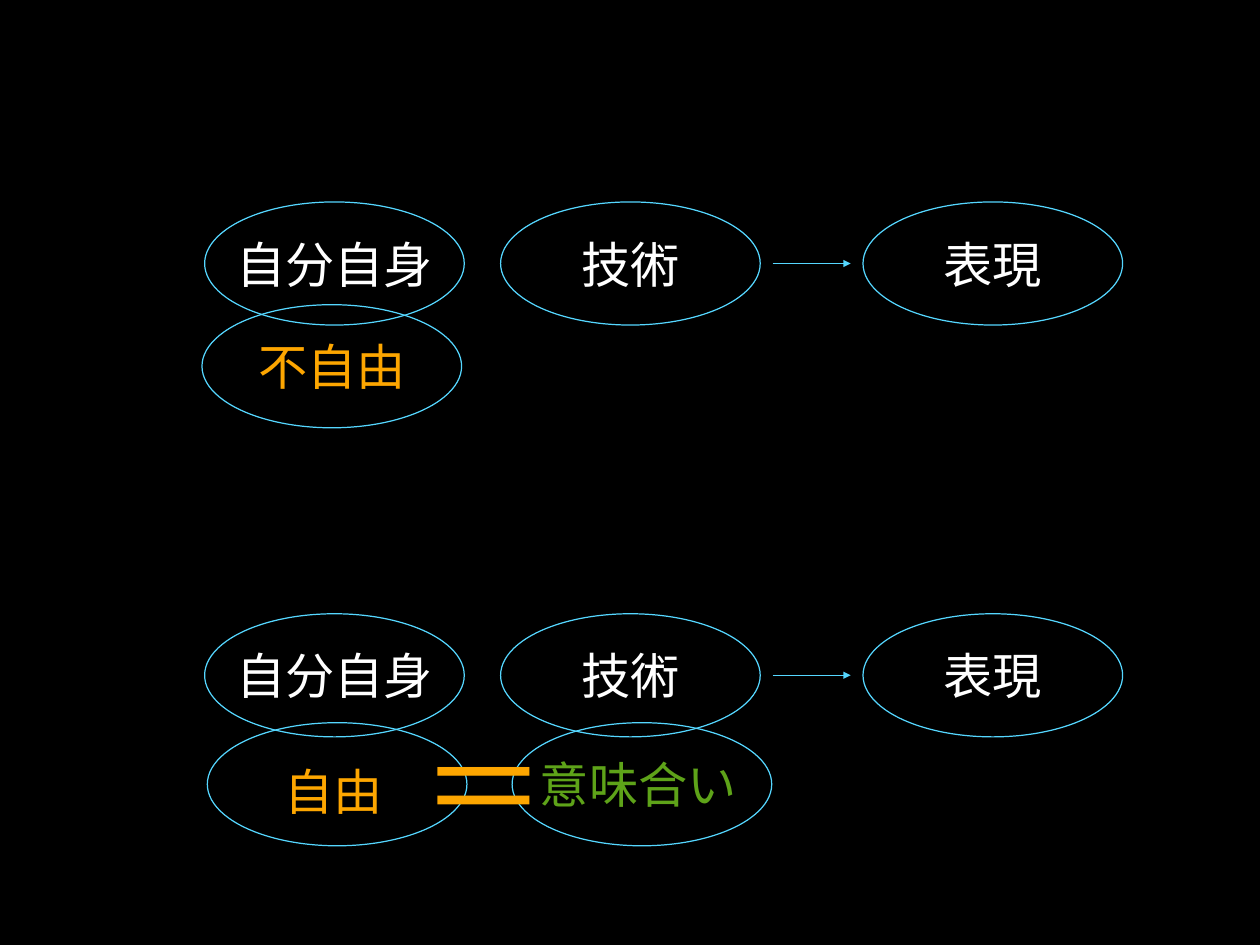
from dataclasses import dataclass

from lxml import etree
from pptx import Presentation
from pptx.dml.color import RGBColor
from pptx.enum.shapes import MSO_CONNECTOR, MSO_SHAPE
from pptx.enum.text import MSO_ANCHOR, PP_ALIGN
from pptx.oxml.ns import qn
from pptx.util import Inches, Pt


@dataclass(frozen=True)
class Theme:
    """Colours, type sizes and shared measures of the slide."""
    background: RGBColor = RGBColor(0x00, 0x00, 0x00)
    outline: RGBColor = RGBColor(0x55, 0xD7, 0xFF)
    white: RGBColor = RGBColor(0xFF, 0xFF, 0xFF)
    orange: RGBColor = RGBColor(0xFD, 0xA6, 0x00)
    green: RGBColor = RGBColor(0x5E, 0xA3, 0x19)
    font: str = "Roboto"
    label_size: int = 40
    sign_size: int = 103
    line_width: int = 1
    oval_width: float = 2.93
    oval_height: float = 1.39
    inset: float = 0.06


THEME = Theme()


def write_label(shape, text, color, size, wrap=False, shift_left=0, shift_down=0):
    """Write one centred line in a shape, shifted by uneven insets."""
    frame = shape.text_frame
    frame.word_wrap = wrap
    frame.vertical_anchor = MSO_ANCHOR.MIDDLE
    frame.margin_left = frame.margin_bottom = Inches(THEME.inset)
    frame.margin_right = Inches(THEME.inset + 2 * shift_left)
    frame.margin_top = Inches(THEME.inset + 2 * shift_down)
    paragraph = frame.paragraphs[0]
    paragraph.text = text
    paragraph.alignment = PP_ALIGN.CENTER
    paragraph.font.name = THEME.font
    paragraph.font.size = Pt(size)
    paragraph.font.color.rgb = color
    properties = paragraph._p.pPr.find(qn("a:defRPr"))
    etree.SubElement(properties, qn("a:ea")).set("typeface", THEME.font)


def add_oval(slide, left, top, text, color, shift_left=0, shift_down=0):
    """Draw an outlined oval with its label."""
    oval = slide.shapes.add_shape(
        MSO_SHAPE.OVAL, Inches(left), Inches(top),
        Inches(THEME.oval_width), Inches(THEME.oval_height))
    oval.shadow.inherit = False
    oval.fill.background()
    oval.line.color.rgb = THEME.outline
    oval.line.width = Pt(THEME.line_width)
    write_label(oval, text, color, THEME.label_size,
                shift_left=shift_left, shift_down=shift_down)


def add_arrow(slide, left, right, middle):
    """Draw a horizontal arrow pointing right."""
    arrow = slide.shapes.add_connector(
        MSO_CONNECTOR.STRAIGHT, Inches(left), Inches(middle),
        Inches(right), Inches(middle))
    arrow.line.color.rgb = THEME.outline
    arrow.line.width = Pt(THEME.line_width)
    etree.SubElement(arrow.line._get_or_add_ln(), qn("a:tailEnd")).set("type", "triangle")
    etree.SubElement(arrow._element.spPr, qn("a:effectLst"))


def add_flow(slide, left, top):
    """Place the self, technique and expression ovals with their arrow."""
    for text, offset in (("自分自身", 0), ("技術", 3.34), ("表現", 7.43)):
        add_oval(slide, left + offset, top, text, THEME.white)
    add_arrow(slide, left + 6.41, left + 7.29, top + THEME.oval_height / 2)


def add_unfree_flow(slide, left, top):
    """Place the upper flow, whose self is not free."""
    add_flow(slide, left, top)
    add_oval(slide, left - 0.03, top + 1.16, "不自由", THEME.orange)


def add_free_flow(slide, left, top):
    """Place the lower flow, where freedom equals meaning."""
    add_flow(slide, left, top)
    add_oval(slide, left + 3.47, top + 1.23, "意味合い", THEME.green, shift_left=0.04)
    add_oval(slide, left + 0.03, top + 1.23, "自由", THEME.orange,
             shift_left=0.04, shift_down=0.07)
    sign = slide.shapes.add_textbox(
        Inches(left + 2.35), Inches(top + 1.15), Inches(1.59), Inches(1.55))
    write_label(sign, "＝", THEME.orange, THEME.sign_size, wrap=True)


def main():
    """Build and save the slide."""
    presentation = Presentation()
    presentation.slide_width = Inches(14.22)
    presentation.slide_height = Inches(10.67)
    slide = presentation.slides.add_slide(presentation.slide_layouts[6])
    slide.background.fill.solid()
    slide.background.fill.fore_color.rgb = THEME.background
    add_unfree_flow(slide, 2.31, 2.28)
    add_free_flow(slide, 2.31, 6.93)
    presentation.save("out.pptx")


if __name__ == "__main__":
    main()
